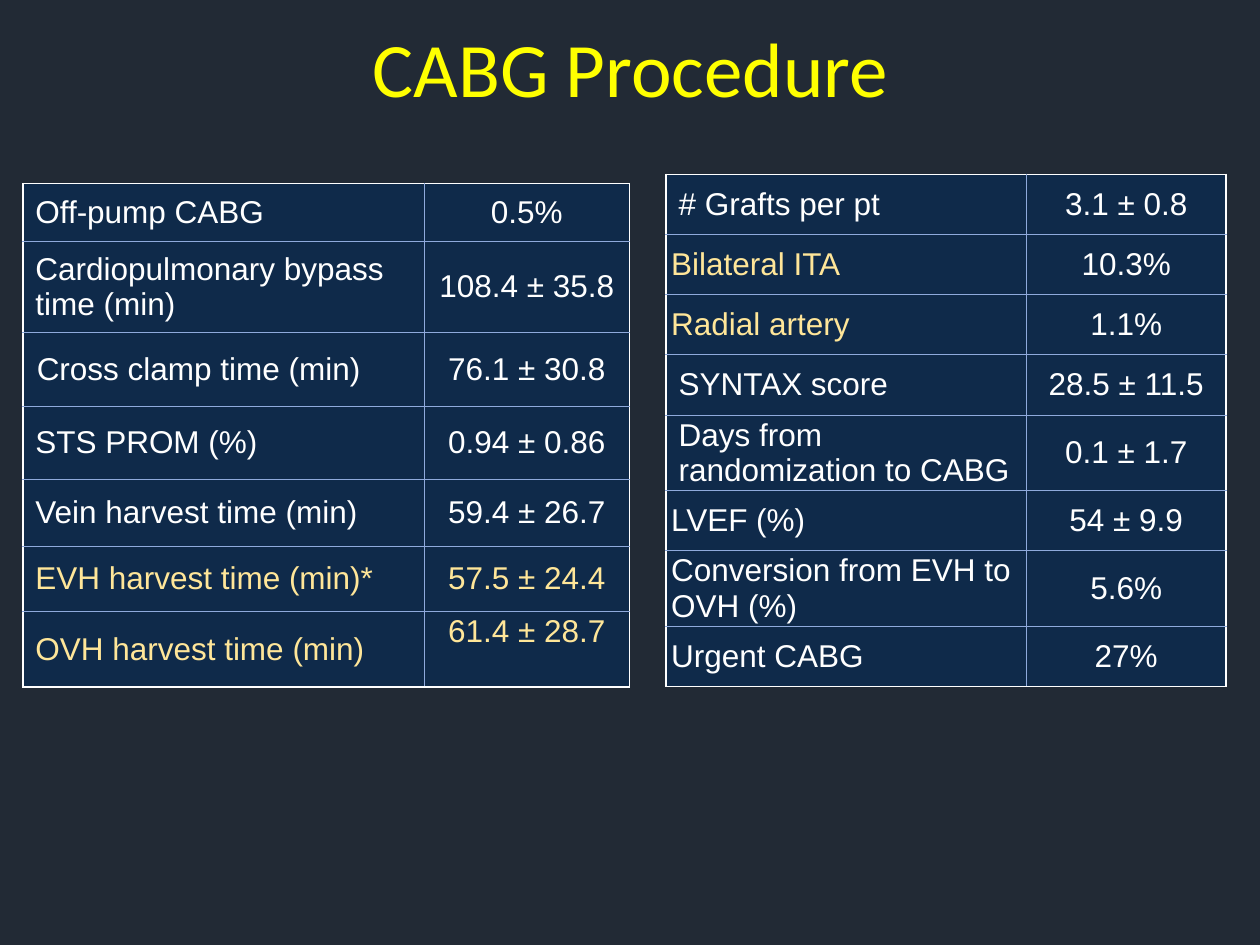
from lxml import etree
from pptx import Presentation
from pptx.dml.color import RGBColor
from pptx.enum.text import MSO_ANCHOR as ANCHOR, PP_ALIGN as ALIGN
from pptx.oxml.ns import qn
from pptx.util import Pt

WHITE, CREAM, YELLOW = "FFFFFF", "FFE699", "FFFF00"
BACKDROP, NAVY, RULE = "222A35", "0F2A4A", "8FAADC"
NEAR, INDENT, NUDGE = 2.9, 7.2, 8

TIMES = [
    (33.1, "Off-pump CABG", "0.5%", INDENT, WHITE, WHITE, 0),
    (51.8, "Cardiopulmonary bypass time (min)", "108.4 ± 35.8", INDENT, WHITE, WHITE, 0),
    (42.4, "Cross clamp time (min)", "76.1 ± 30.8", NUDGE, WHITE, WHITE, 0),
    (41.7, "STS PROM (%)", "0.94 ± 0.86", INDENT, WHITE, WHITE, 0),
    (38.2, "Vein harvest time (min)", "59.4 ± 26.7", INDENT, WHITE, WHITE, 0),
    (37.2, "EVH harvest time (min)*", "57.5 ± 24.4", INDENT, CREAM, CREAM, 0),
    (43.2, "OVH harvest time (min)", "61.4 ± 28.7", INDENT, CREAM, CREAM, 20.6),
]
GRAFTS = [
    (34.4, "# Grafts per pt", "3.1 ± 0.8", INDENT, WHITE, WHITE, 0),
    (34.4, "Bilateral ITA", "10.3%", NEAR, CREAM, WHITE, 0),
    (34.4, "Radial artery", "1.1%", NEAR, CREAM, WHITE, 0),
    (34.4, "SYNTAX score", "28.5 ± 11.5", INDENT, WHITE, WHITE, 0),
    (43.2, "Days from randomization to CABG", "0.1 ± 1.7", INDENT, WHITE, WHITE, 0),
    (34.4, "LVEF (%)", "54 ± 9.9", NEAR, WHITE, WHITE, 0),
    (43.2, "Conversion from EVH to OVH (%)", "5.6%", NEAR, WHITE, WHITE, 0),
    (34.4, "Urgent CABG", "27%", NEAR, WHITE, WHITE, 0),
]


def rgb(value):
    """Turn a hex string into a colour."""
    return RGBColor.from_string(value)


def write(tf, text, size=18, font="Arial", color=WHITE, align=ALIGN.LEFT):
    """Put one formatted run of text into a text frame."""
    tf.word_wrap = True
    p = tf.paragraphs[0]
    p.alignment = align
    r = p.add_run()
    r.text = text
    r.font.size, r.font.name = Pt(size), font
    r.font.color.rgb = rgb(color)


def add_borders(cell, outer):
    """Draw white outer edges and thin blue inner edges around a cell."""
    tcPr = cell._tc.get_or_add_tcPr()
    for i, side in enumerate("LRTB"):
        color, width = (WHITE, 1) if side in outer else (RULE, 0.5)
        ln = etree.Element(qn(f"a:ln{side}"), w=str(Pt(width)))
        fill = etree.SubElement(ln, qn("a:solidFill"))
        etree.SubElement(fill, qn("a:srgbClr"), val=color)
        tcPr.insert(i, ln)


def format_cell(cell, left, bottom, outer):
    """Set the margins, fill and borders of a cell."""
    cell.margin_left, cell.margin_right = Pt(left), Pt(NEAR)
    cell.margin_top, cell.margin_bottom = Pt(0), Pt(bottom)
    cell.vertical_anchor = ANCHOR.MIDDLE
    cell.fill.solid()
    cell.fill.fore_color.rgb = rgb(NAVY)
    add_borders(cell, outer)


def add_title(s, x, y, w, h):
    """Place the slide title in its box."""
    tf = s.shapes.add_textbox(Pt(x), Pt(y), Pt(w), Pt(h)).text_frame
    tf.vertical_anchor = ANCHOR.MIDDLE
    write(tf, "CABG Procedure", size=44, font="Calibri", color=YELLOW, align=ALIGN.CENTER)


def add_results(s, x, y, widths, rows):
    """Place a table of labels and values with its top left corner at x, y."""
    height = sum(row[0] for row in rows)
    table = s.shapes.add_table(
        len(rows), 2, Pt(x), Pt(y), Pt(sum(widths)), Pt(height)).table
    table.first_row = table.horz_banding = False
    for col, width in zip(table.columns, widths):
        col.width = Pt(width)
    for i, (h, label, value, indent, label_color, value_color, bottom) in enumerate(rows):
        table.rows[i].height = Pt(h)
        ends = ("T" if i == 0 else "") + ("B" if i == len(rows) - 1 else "")
        name, result = table.cell(i, 0), table.cell(i, 1)
        format_cell(name, indent, 0, "L" + ends)
        format_cell(result, NEAR, bottom, "R" + ends)
        write(name.text_frame, label, color=label_color)
        write(result.text_frame, value, color=value_color, align=ALIGN.CENTER)


def main():
    """Build and save the slide."""
    prs = Presentation()
    prs.slide_width, prs.slide_height = Pt(720), Pt(540)
    s = prs.slides.add_slide(prs.slide_layouts[6])
    s.background.fill.solid()
    s.background.fill.fore_color.rgb = rgb(BACKDROP)
    add_title(s, 39.6, 8, 641.5, 60.5)
    add_results(s, 13, 105, (229.3, 117.5), TIMES)
    add_results(s, 380.6, 99.6, (205.8, 114.3), GRAFTS)
    prs.save("out.pptx")


if __name__ == "__main__":
    main()
